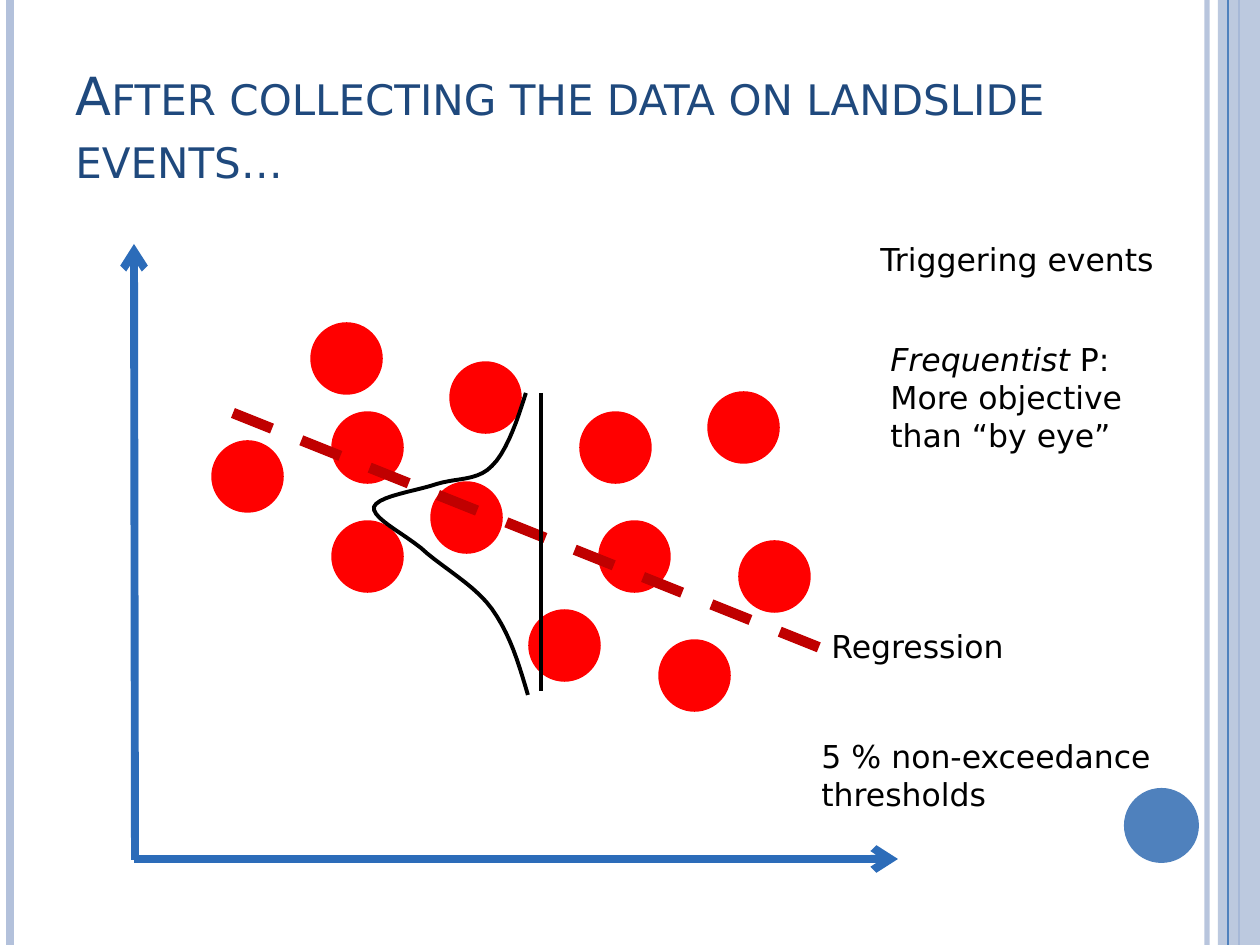
from lxml.etree import SubElement as Sub
from pptx import Presentation
from pptx.dml.color import RGBColor
from pptx.enum.dml import MSO_LINE as Dash
from pptx.enum.shapes import MSO_CONNECTOR as Conn, MSO_SHAPE as Kind
from pptx.enum.text import MSO_ANCHOR as Anchor, MSO_AUTO_SIZE as Auto
from pptx.oxml.ns import qn
from pptx.util import Pt

FONT = "DejaVu Sans"
DOTS = [(451, 363), (213, 442), (312, 324), (333, 413), (530, 611), (709, 393),
        (432, 483), (600, 522), (333, 522), (660, 641), (581, 413), (740, 542)]
BELL = [(528, 695), (519, 664), (510, 634), (492, 609), (475, 585), (440, 566),
        (421, 548), (401, 532), (372, 518), (374, 507), (378, 496), (417, 491),
        (437, 484), (456, 478), (478, 481), (492, 466), (508, 451), (520, 412),
        (526, 393)]


def px(*nums):
    """Turn pixel lengths into a list of EMU."""
    return [round(n * 914400 / 126) for n in nums]


def paint(fill, hue, alpha=100):
    """Give a fill a solid colour, with opacity in percent."""
    fill.solid()
    fill.fore_color.rgb = RGBColor.from_string(hue)
    if alpha < 100:
        clr = fill._xPr.find(".//" + qn("a:srgbClr"))
        Sub(clr, qn("a:alpha"), val=str(alpha * 1000))


def add_line(slide, ends, hue, width, alpha=100, dash=None, arrow=False):
    """Draw a straight line, dashed or with an arrowhead if asked."""
    line = slide.shapes.add_connector(Conn.STRAIGHT, *px(*ends))
    paint(line.line.fill, hue, alpha)
    line.line.width = Pt(width)
    if dash:
        line.line.dash_style = dash
    if arrow:
        Sub(line.line._get_or_add_ln(), qn("a:tailEnd"), type="arrow")
    Sub(line._element.spPr, qn("a:effectLst"))


def add_form(slide, kind, box, hue, alpha=100, edge=0):
    """Add a filled preset shape."""
    form = slide.shapes.add_shape(kind, *px(*box))
    form.shadow.inherit = False
    paint(form.fill, hue, alpha)
    if edge:
        paint(form.line.fill, hue)
        form.line.width = Pt(edge)
    else:
        form.line.fill.background()


def add_curve(slide, knots, hue, width, steps=10):
    """Trace a chain of cubic Bezier arcs as an open outline."""
    spots = []
    for i in range(0, len(knots) - 1, 3):
        for k in range(1, steps + 1):
            t = k / steps
            parts = ((1 - t) ** 3, 3 * t * (1 - t) ** 2, 3 * t * t * (1 - t), t ** 3)
            spots.append(px(*(sum(w * p[axis] for w, p in zip(parts, knots[i:i + 4]))
                              for axis in (0, 1))))
    pen = slide.shapes.build_freeform(*px(*knots[0]))
    pen.add_line_segments(spots, close=False)
    curve = pen.convert_to_shape()
    curve.shadow.inherit = False
    curve.fill.background()
    paint(curve.line.fill, hue)
    curve.line.width = Pt(width)


def add_text(slide, box, paras, size=18, hue="000000", wrap=True, title=False):
    """Add a text box from paragraphs of (text, italic) runs."""
    frame = slide.shapes.add_textbox(*px(*box)).text_frame
    frame.word_wrap = wrap
    frame.auto_size = Auto.NONE if title else Auto.SHAPE_TO_FIT_TEXT
    frame.vertical_anchor = Anchor.BOTTOM if title else Anchor.TOP
    for i, runs in enumerate(paras):
        para = frame.add_paragraph() if i else frame.paragraphs[0]
        for words, slant in runs:
            run = para.add_run()
            run.text = words
            font = run.font
            font.name, font.size, font.italic = FONT, Pt(size), slant
            font.color.rgb = RGBColor.from_string(hue)
            if title:
                run._r.get_or_add_rPr().set("cap", "small")


def add_frame(slide):
    """Draw the stripes and disc at the slide edges."""
    add_line(slide, (1207, 0, 1207, 945), "B3C1DB", 3, alpha=93)
    add_line(slide, (10, 0, 10, 945), "B3C1DB", 4.5)
    add_line(slide, (1239, 0, 1239, 945), "4F81BD", 1.5)
    add_form(slide, Kind.RECTANGLE, (1218, 0, 42, 945), "B3C1DB", alpha=87)
    add_line(slide, (1228, 0, 1228, 945), "4F81BD", 0.75)
    add_form(slide, Kind.OVAL, (1124, 788, 75, 75), "4F81BD")


def add_plot(slide):
    """Draw the axes, events, regression line and bell curve."""
    add_line(slide, (134, 859, 898, 859), "2C6CB9", 4.5, arrow=True)
    add_line(slide, (135, 860, 134, 244), "2C6CB9", 4.5, arrow=True)
    for x, y in DOTS:
        add_form(slide, Kind.OVAL, (x, y, 69, 69), "FF0000", edge=2)
    add_line(slide, (233, 413, 828, 651), "C00000", 6, dash=Dash.DASH)
    add_line(slide, (541, 393, 541, 691), "000000", 2.25)
    add_curve(slide, BELL, "000000", 2.25)


def main():
    """Build and save the slide."""
    deck = Presentation()
    deck.slide_width, deck.slide_height = px(1260, 945)
    slide = deck.slides.add_slide(deck.slide_layouts[6])
    add_frame(slide)
    add_text(slide, (63, 38, 1029, 157),
             [[("After collecting the data on landslide events…", False)]],
             size=30, hue="1F497D", title=True)
    add_plot(slide)
    add_text(slide, (878, 334, 271, 127),
             [[("Frequentist", True), (" P:", False)],
              [("More objective", False)], [("than “by eye”", False)]], wrap=False)
    add_text(slide, (819, 621, 258, 50), [[("Regression", False)]])
    add_text(slide, (809, 731, 407, 89), [[("5 % non-exceedance thresholds", False)]])
    add_text(slide, (868, 234, 302, 50), [[("Triggering events", False)]], wrap=False)
    deck.save("out.pptx")


if __name__ == "__main__":
    main()
